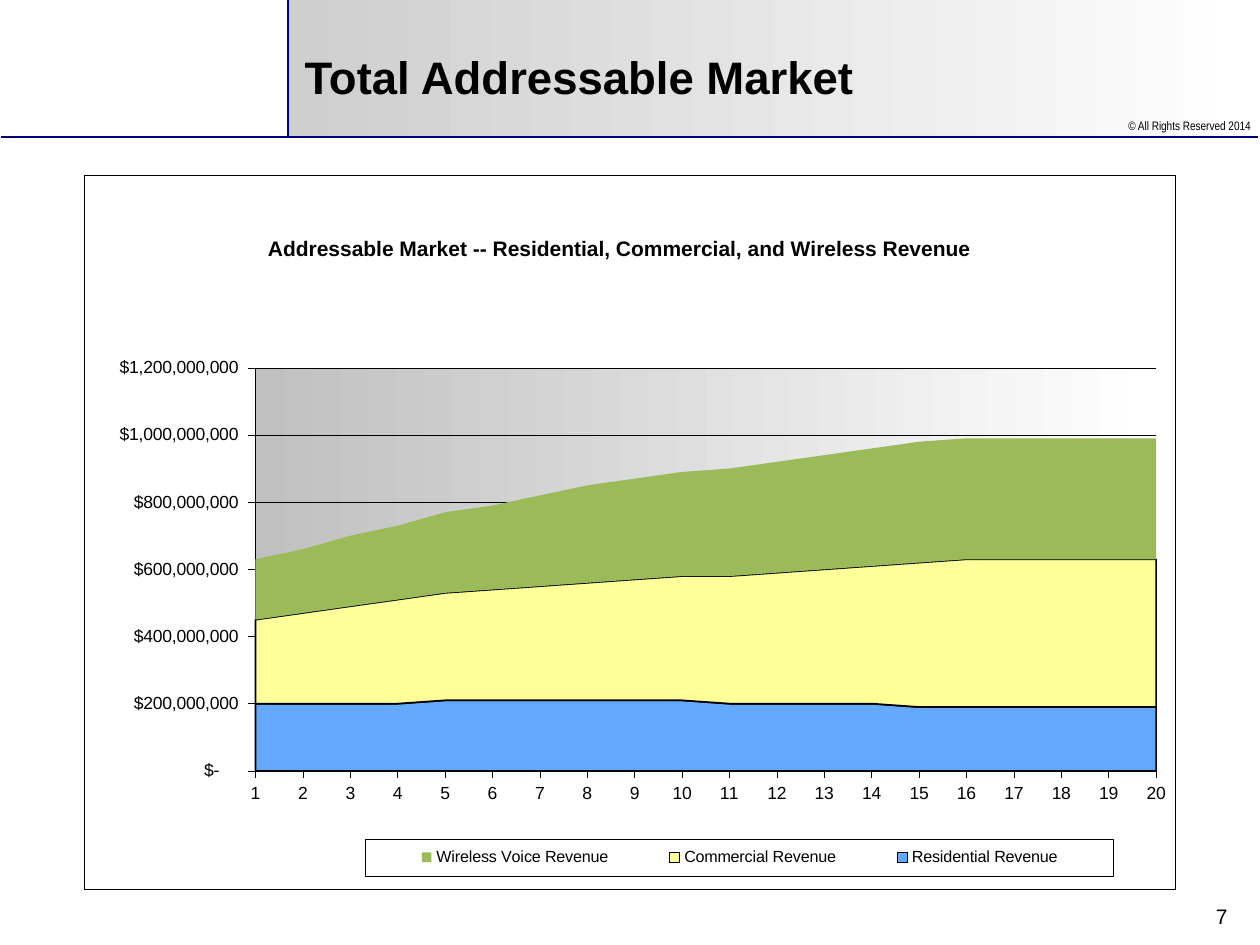
from dataclasses import dataclass

from pptx import Presentation
from pptx.chart.data import CategoryChartData
from pptx.dml.color import RGBColor
from pptx.dml.fill import FillFormat
from pptx.dml.line import LineFormat
from pptx.enum.chart import XL_CHART_TYPE, XL_LEGEND_POSITION, XL_TICK_MARK
from pptx.enum.shapes import MSO_CONNECTOR, MSO_SHAPE
from pptx.enum.text import MSO_ANCHOR, MSO_AUTO_SIZE, PP_ALIGN
from pptx.oxml.xmlchemy import OxmlElement
from pptx.util import Pt

SCALE = 914400 / 126
MILLION = 1_000_000
MONEY = '_("$"* #,##0_);_("$"* \\(#,##0\\);_("$"* "-"??_);_(@_)'


@dataclass(frozen=True)
class Theme:
    face: str = "Arial"
    narrow: str = "Arial Narrow"
    ink: str = "000000"
    paper: str = "FFFFFF"
    navy: str = "000080"
    band: str = "CECECE"
    plot: str = "C0C0C0"
    head: float = 26
    title: float = 12
    label: float = 10
    key: float = 9.2
    note: float = 7
    thin: float = 0.25


# name, fill, outlined, values in millions
SERIES = [
    ("Residential Revenue", "63AAFE", True,
     [200] * 4 + [210] * 6 + [200] * 4 + [190] * 6),
    ("Commercial Revenue", "FFFF99", True,
     [250, 270, 290, *range(310, 420, 10), 430] + [440] * 5),
    ("Wireless Voice Revenue", "9BBB59", False,
     [180, 190, 210, 220, 240, 250, 270, *range(290, 360, 10)] + [360] * 6),
]


def px(*nums):
    return [round(n * SCALE) for n in nums]


def rgb(code):
    return RGBColor.from_string(code)


def fade(fill, start, end):
    """Fill with a left-to-right gradient."""
    fill.gradient()
    fill.gradient_angle = 0
    for stop, code in zip(fill.gradient_stops, (start, end)):
        stop.color.rgb = rgb(code)


def stroke(line, code, width):
    line.color.rgb = rgb(code)
    line.width = Pt(width)


def layout(x, y, w=None, h=None, inner=False):
    """Make a manual chart layout from fractions of the chart."""
    outer = OxmlElement("c:layout")
    manual = OxmlElement("c:manualLayout")
    outer.append(manual)
    parts = [("layoutTarget", "inner")] if inner else []
    parts += [("xMode", "edge"), ("yMode", "edge")]
    parts += [(k, v) for k, v in zip("xywh", (x, y, w, h)) if v is not None]
    for tag, val in parts:
        item = OxmlElement(f"c:{tag}")
        item.set("val", str(val))
        manual.append(item)
    return outer


def place(node, spot, after=None):
    """Swap the layout of a chart part for a new one."""
    for old in node.findall(spot.tag):
        node.remove(old)
    if after is None:
        node.insert(0, spot)
    else:
        node.find(after.tag).addnext(spot)


class Deck:
    def __init__(self, theme, width, height):
        self.theme = theme
        self.file = Presentation()
        self.file.slide_width, self.file.slide_height = px(width, height)
        self.slide = self.file.slides.add_slide(self.file.slide_layouts[5])
        self.shapes = self.slide.shapes

    def font(self, font, size, face=None, bold=False):
        font.name = face or self.theme.face
        font.size = Pt(size)
        font.bold = bold
        font.color.rgb = rgb(self.theme.ink)

    def band(self, *area):
        shape = self.shapes.add_shape(MSO_SHAPE.RECTANGLE, *px(*area))
        shape.shadow.inherit = False
        fade(shape.fill, self.theme.band, self.theme.paper)
        shape.line.fill.background()

    def rule(self, *ends):
        line = self.shapes.add_connector(MSO_CONNECTOR.STRAIGHT, *px(*ends))
        stroke(line.line, self.theme.navy, 1)
        line._element.spPr.append(OxmlElement("a:effectLst"))

    def title(self, text, *area):
        shape = self.shapes.title
        shape.left, shape.top, shape.width, shape.height = px(*area)
        frame = shape.text_frame
        frame.text = text
        frame.auto_size = MSO_AUTO_SIZE.NONE
        frame.vertical_anchor = MSO_ANCHOR.MIDDLE
        para = frame.paragraphs[0]
        para.alignment = PP_ALIGN.LEFT
        self.font(para.font, self.theme.head, bold=True)
        self.shapes._spTree.append(shape._element)  # in front of the band

    def text(self, text, size, *area, face=None):
        frame = self.shapes.add_textbox(*px(*area)).text_frame
        frame.word_wrap = True
        frame.text = text
        para = frame.paragraphs[0]
        para.alignment = PP_ALIGN.RIGHT
        self.font(para.font, size, face)

    def axis(self, axis):
        axis.major_tick_mark = XL_TICK_MARK.OUTSIDE
        axis.minor_tick_mark = XL_TICK_MARK.NONE
        self.font(axis.tick_labels.font, self.theme.label)
        stroke(axis.format.line, self.theme.ink, self.theme.thin)

    def frame(self, props):
        """Give a chart part a white fill and a thin border."""
        fill = FillFormat.from_fill_parent(props)
        fill.solid()
        fill.fore_color.rgb = rgb(self.theme.paper)
        stroke(LineFormat(props), self.theme.ink, self.theme.thin)

    def chart(self, head, *area):
        theme = self.theme
        data = CategoryChartData(number_format=MONEY)
        data.categories = [str(n) for n in range(1, 21)]
        for name, _, _, vals in SERIES:
            data.add_series(name, [v * MILLION for v in vals])
        chart = self.shapes.add_chart(
            XL_CHART_TYPE.AREA_STACKED, *px(*area), data).chart
        self.font(chart.font, theme.label)
        root = chart._chartSpace
        props = OxmlElement("c:spPr")
        root.chart.addnext(props)
        self.frame(props)

        chart.has_title = True
        title = chart.chart_title
        title.include_in_layout = False
        title.text_frame.text = head
        self.font(title.text_frame.paragraphs[0].font, theme.title, bold=True)
        node = title._element
        place(node, layout(0.165, 0.08), node.find(OxmlElement("c:tx").tag))

        plot = root.chart.plotArea
        place(plot, layout(0.157, 0.27, 0.826, 0.565, inner=True))
        props = OxmlElement("c:spPr")
        plot.append(props)
        fade(FillFormat.from_fill_parent(props), theme.plot, theme.paper)

        self.axis(chart.category_axis)
        axis = chart.value_axis
        self.axis(axis)
        axis.minimum_scale = 0
        axis.maximum_scale = 1200 * MILLION
        axis.major_unit = 200 * MILLION
        axis.has_major_gridlines = True
        stroke(axis.major_gridlines.format.line, theme.ink, theme.thin)
        axis.tick_labels.number_format = MONEY
        axis.tick_labels.number_format_is_linked = False
        axis._element.find(OxmlElement("c:crossBetween").tag).set("val", "midCat")

        chart.plots[0].vary_by_categories = False
        for item, (_, code, lined, _) in zip(chart.plots[0].series, SERIES):
            item.format.fill.solid()
            item.format.fill.fore_color.rgb = rgb(code)
            if lined:
                stroke(item.format.line, theme.ink, 1)
            else:
                item.format.line.fill.background()

        chart.has_legend = True
        key = chart.legend
        key.position = XL_LEGEND_POSITION.RIGHT
        key.include_in_layout = False
        self.font(key.font, theme.key)
        node = key._element
        place(node, layout(0.258, 0.93, 0.686, 0.052),
              node.find(OxmlElement("c:legendPos").tag))
        props = OxmlElement("c:spPr")
        node.find(OxmlElement("c:txPr").tag).addprevious(props)
        self.frame(props)


def main():
    theme = Theme()
    deck = Deck(theme, 1260, 945)
    deck.band(288, 0, 970, 137)
    deck.rule(1, 137, 1258, 137)
    deck.rule(288, -1, 288, 137)
    deck.text("© All Rights Reserved 2014", theme.note, 1079, 112, 184, 42,
              face=theme.narrow)
    deck.title("Total Addressable Market", 292, 28, 853, 96)
    deck.text("7", theme.title, 978, 897, 262, 39)
    deck.chart("Addressable Market -- Residential, Commercial, and Wireless Revenue",
               84, 175, 1091, 714)
    deck.file.save("out.pptx")


if __name__ == "__main__":
    main()
